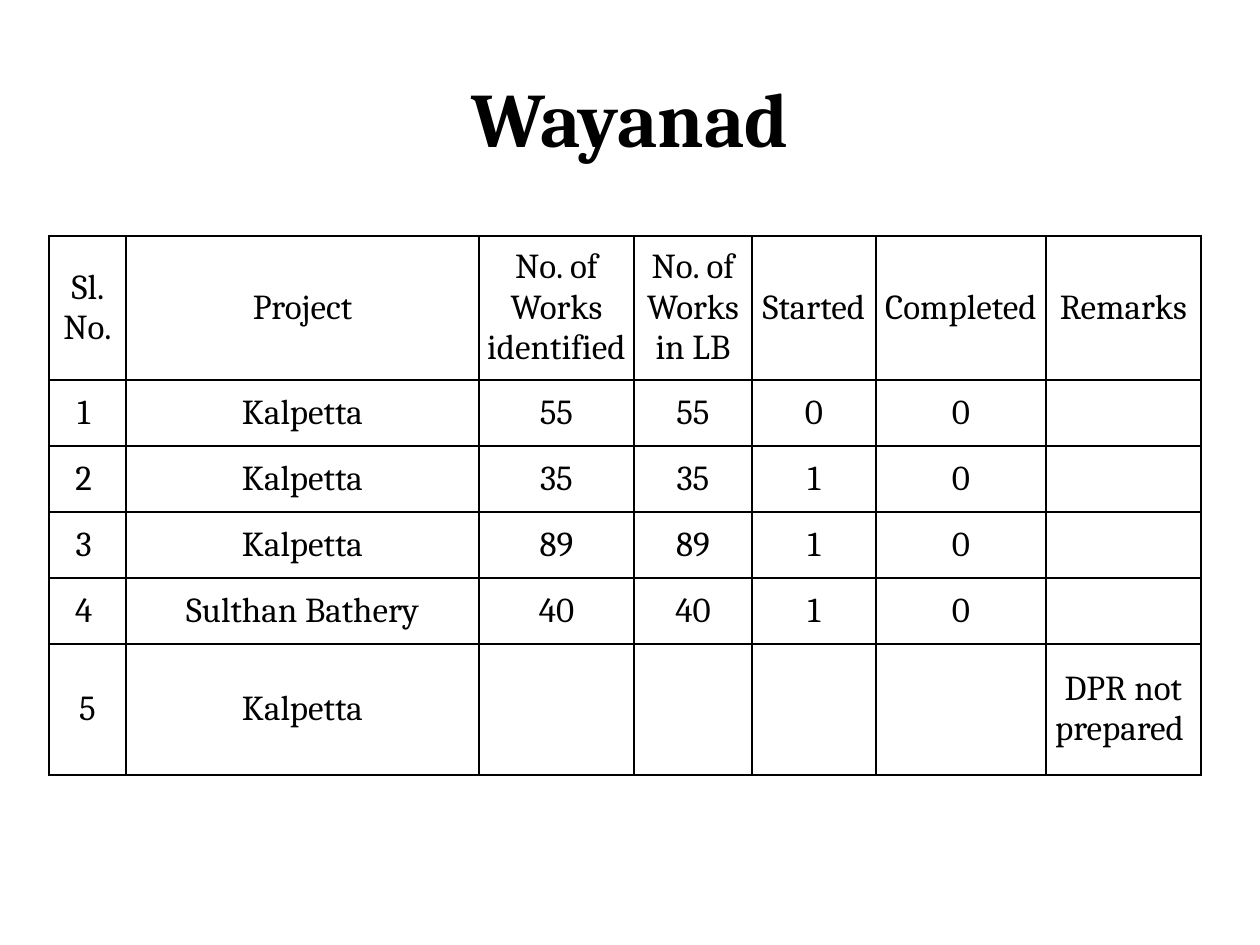
"""Build the Wayanad project status slide."""
from dataclasses import dataclass
from itertools import product

from lxml.etree import SubElement
from pptx import Presentation
from pptx.dml.color import RGBColor
from pptx.enum.text import MSO_ANCHOR as Anchor, PP_ALIGN as Align
from pptx.oxml.ns import qn
from pptx.util import Pt

TITLE = "Wayanad"
TITLE_BOX = (63, 38, 1134, 157)
ROWS = [
    ("Sl. No.", "Project", "No. of Works identified", "No. of Works in LB",
     "Started", "Completed", "Remarks"),
    ("1 ", "Kalpetta", "55", "55", "0", "0", ""),
    ("2 ", "Kalpetta", "35", "35", "1", "0", ""),
    ("3 ", "Kalpetta", "89", "89", "1", "0", ""),
    ("4 ", "Sulthan Bathery", "40", "40", "1", "0", ""),
    ("5", "Kalpetta", "", "", "", "", "DPR not prepared "),
]
TABLE_LEFT, TABLE_TOP = 49, 236
COLUMN_WIDTHS = (77, 353, 155, 118, 124, 170, 155)
ROW_HEIGHTS = (144, 66, 66, 66, 66, 131)
CELL_INSET = 8


@dataclass(frozen=True)
class Theme:
    font: str = "Cambria"
    ink: str = "000000"
    title_size: int = 44
    cell_size: int = 20
    space_after: int = 10
    border: int = 1


THEME = Theme()


def px(value):
    return round(value * 914400 / 126)


def write(frame, text, size, bold=False, space_after=0):
    frame.word_wrap = True
    para = frame.paragraphs[0]
    para.alignment = Align.CENTER
    para.space_after = Pt(space_after)
    para.font.size = Pt(size)
    if text:
        span = para.add_run()
        span.text = text
        span.font.name = THEME.font
        span.font.size = Pt(size)
        span.font.bold = bold
        span.font.color.rgb = RGBColor.from_string(THEME.ink)


def add_borders(cell):
    properties = cell._tc.get_or_add_tcPr()
    for side in ("lnL", "lnR", "lnT", "lnB"):
        line = SubElement(properties, qn(f"a:{side}"), w=str(Pt(THEME.border)))
        fill = SubElement(line, qn("a:solidFill"))
        SubElement(fill, qn("a:srgbClr"), val=THEME.ink)


def add_title(page):
    box = page.shapes.add_textbox(*map(px, TITLE_BOX))
    box.text_frame.vertical_anchor = Anchor.MIDDLE
    write(box.text_frame, TITLE, THEME.title_size, bold=True)


def add_works_table(page):
    table = page.shapes.add_table(
        len(ROWS), len(COLUMN_WIDTHS), px(TABLE_LEFT), px(TABLE_TOP),
        px(sum(COLUMN_WIDTHS)), px(sum(ROW_HEIGHTS))).table
    table.first_row = table.horz_banding = False
    for column, width in zip(table.columns, COLUMN_WIDTHS):
        column.width = px(width)
    for row, height in zip(table.rows, ROW_HEIGHTS):
        row.height = px(height)
    for row, column in product(range(len(ROWS)), range(len(COLUMN_WIDTHS))):
        cell = table.cell(row, column)
        cell.margin_left = cell.margin_right = px(CELL_INSET)
        cell.margin_top = cell.margin_bottom = 0
        cell.vertical_anchor = Anchor.MIDDLE
        add_borders(cell)
        cell.fill.background()
        write(cell.text_frame, ROWS[row][column], THEME.cell_size,
              space_after=THEME.space_after)


def main():
    deck = Presentation()
    deck.slide_width, deck.slide_height = px(1260), px(945)
    page = deck.slides.add_slide(deck.slide_layouts[6])
    add_title(page)
    add_works_table(page)
    deck.save("out.pptx")


if __name__ == "__main__":
    main()
